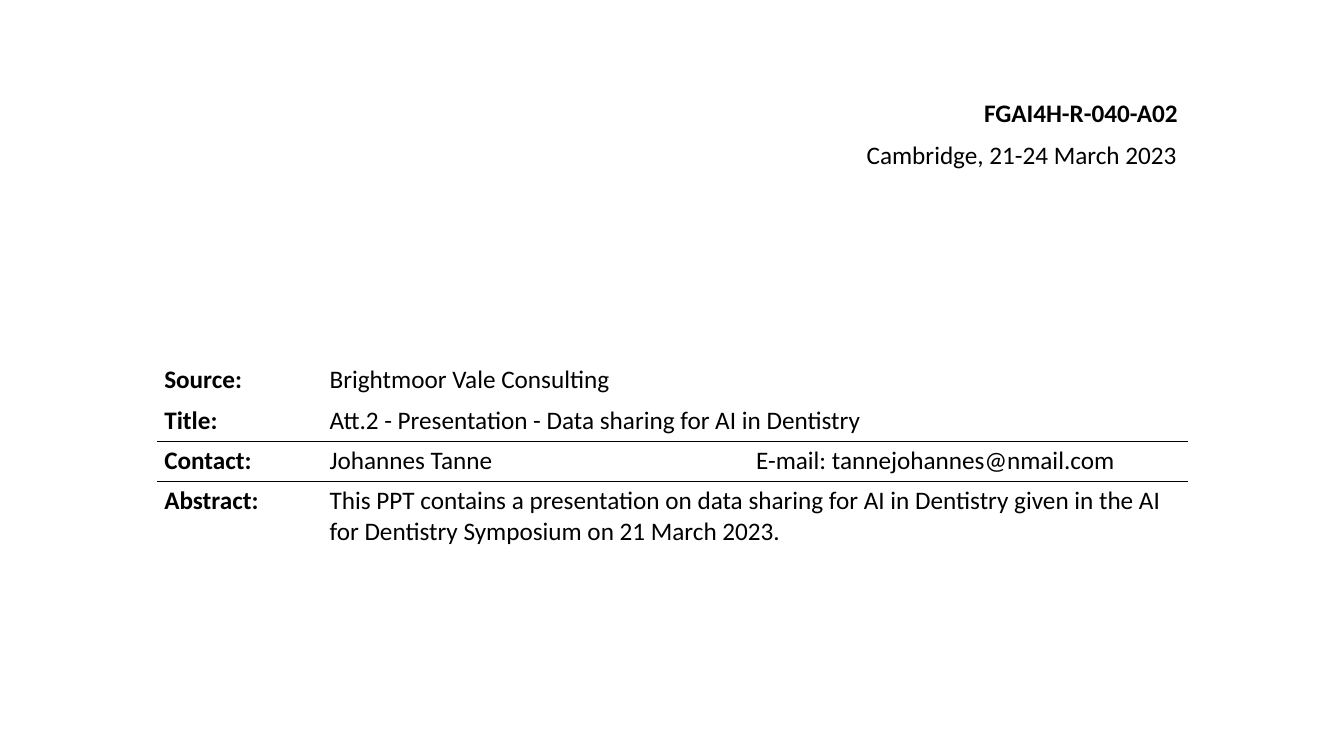
"""Build the cover slide of a meeting document."""
from lxml import etree
from pptx import Presentation
from pptx.dml.color import RGBColor
from pptx.enum.text import MSO_AUTO_SIZE, PP_ALIGN
from pptx.oxml.ns import qn
from pptx.util import Inches, Pt

RIGHT = PP_ALIGN.RIGHT
GROW = MSO_AUTO_SIZE.SHAPE_TO_FIT_TEXT
BLACK = "000000"
NO_GRID_STYLE = "{2D5ABB26-0587-4C30-8999-92F81FD0307C}"

HEADINGS = [
    ("FGAI4H-R-040-A02", 9.63, 0.92, 2.15, True),
    ("Cambridge, 21-24 March 2023", 8.46, 1.33, 3.31, False),
]
DETAILS = [
    ("Source:", "Brightmoor Vale Consulting"),
    ("Title:", "Att.2 - Presentation - Data sharing for AI in Dentistry"),
    ("Contact:", "Johannes Tanne", "E-mail: tannejohannes@nmail.com"),
    ("Abstract:", "This PPT contains a presentation on data sharing for AI in "
                  "Dentistry given in the AI for Dentistry Symposium on 21 March 2023."),
]
COL_WIDTHS = [1.64, 4.23, 4.35]
ROW_HEIGHT = 0.4
RULED_ROW = 2
EDGES = {RULED_ROW - 1: ["lnB"], RULED_ROW: ["lnT", "lnB"], RULED_ROW + 1: ["lnT"]}


def rgb(value):
    return RGBColor.from_string(value)


def write(tf, text, bold):
    tf.text = text
    p = tf.paragraphs[0]
    for r in p.runs:
        r.font.name = "Calibri"
        r.font.size = Pt(18)
        r.font.bold = bold
        r.font.color.rgb = rgb(BLACK)
    return p


def add_border(cell, edge):
    tc_pr = cell._tc.get_or_add_tcPr()
    ln = etree.SubElement(tc_pr, qn(f"a:{edge}"), w=str(Pt(1)))
    fill = etree.SubElement(ln, qn("a:solidFill"))
    etree.SubElement(fill, qn("a:srgbClr"), val=BLACK)


def add_heading(slide, text, left, top, width, bold):
    sp = slide.shapes.add_textbox(Inches(left), Inches(top), Inches(width), Inches(0.4))
    tf = sp.text_frame
    tf.word_wrap = False
    tf.auto_size = GROW
    write(tf, text, bold).alignment = RIGHT


def add_details(slide):
    frame = slide.shapes.add_table(
        len(DETAILS), len(COL_WIDTHS), Inches(1.56), Inches(3.58),
        Inches(sum(COL_WIDTHS)), Inches(ROW_HEIGHT * len(DETAILS)))
    table = frame.table
    table.first_row = table.horz_banding = False
    table._tbl.tblPr.find(qn("a:tableStyleId")).text = NO_GRID_STYLE
    for col, width in zip(table.columns, COL_WIDTHS):
        col.width = Inches(width)
    for i, texts in enumerate(DETAILS):
        table.rows[i].height = Inches(ROW_HEIGHT)
        for j in range(len(COL_WIDTHS)):
            cell = table.cell(i, j)
            cell.margin_left = cell.margin_right = Inches(0.07)
            cell.margin_top = cell.margin_bottom = Inches(0.04)
            for edge in EDGES.get(i, []):
                add_border(cell, edge)
            cell.fill.background()
            if j < len(texts):
                write(cell.text_frame, texts[j], j == 0)
        if len(texts) < len(COL_WIDTHS):
            table.cell(i, 1).merge(table.cell(i, 2))


def main():
    prs = Presentation()
    prs.slide_width, prs.slide_height = Inches(13.33), Inches(7.5)
    slide = prs.slides.add_slide(prs.slide_layouts[6])
    for heading in HEADINGS:
        add_heading(slide, *heading)
    add_details(slide)
    prs.save("out.pptx")


if __name__ == "__main__":
    main()
